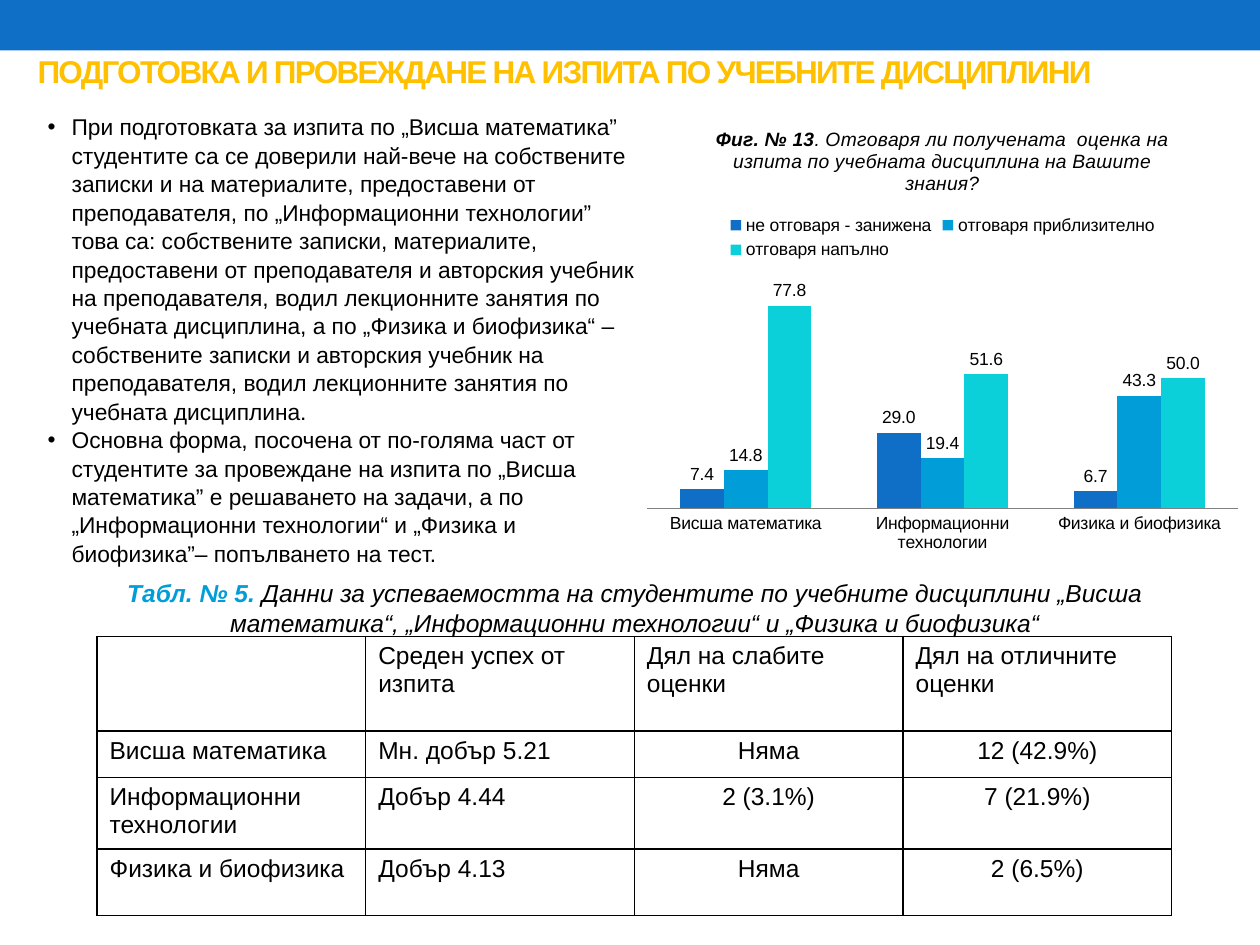
from lxml import etree
from pptx import Presentation
from pptx.chart.data import CategoryChartData
from pptx.dml.color import RGBColor
from pptx.enum.chart import XL_CHART_TYPE, XL_LABEL_POSITION, XL_LEGEND_POSITION, XL_TICK_MARK
from pptx.enum.shapes import MSO_SHAPE
from pptx.enum.text import MSO_ANCHOR, PP_ALIGN
from pptx.oxml import parse_xml
from pptx.oxml.ns import nsdecls, qn
from pptx.util import Inches, Pt


def color(value):
    return RGBColor.from_string(value)


def add_run(paragraph, text, size, hue="000000", bold=False, italic=False):
    run = paragraph.add_run()
    run.text = text
    run.font.name = "Arial"
    run.font.size = Pt(size)
    run.font.bold = bold
    run.font.italic = italic
    run.font.color.rgb = color(hue)
    return run


prs = Presentation()
prs.slide_width, prs.slide_height = Inches(10), Inches(7.5)
slide = prs.slides.add_slide(prs.slide_layouts[6])
shapes = slide.shapes

band = shapes.add_shape(MSO_SHAPE.RECTANGLE, 0, 0, Inches(10), Inches(0.4))
band.shadow.inherit = False
band.fill.solid()
band.fill.fore_color.rgb = color("0F6FC6")
band.line.fill.background()

heading = shapes.add_textbox(Inches(0.2), Inches(0.21), Inches(9.61), Inches(0.71)).text_frame
heading.word_wrap = True
heading.vertical_anchor = MSO_ANCHOR.MIDDLE
heading_run = add_run(heading.paragraphs[0], "ПОДГОТОВКА И ПРОВЕЖДАНЕ НА ИЗПИТА ПО УЧЕБНИТЕ ДИСЦИПЛИНИ",
                      18, "FFC000", bold=True)
heading_run.font._element.set("spc", "-100")

# Findings
findings = [
    "При подготовката за изпита по „Висша математика” студентите са се доверили най-вече на "
    "собствените записки и на материалите, предоставени от преподавателя, по „Информационни "
    "технологии” това са: собствените записки, материалите, предоставени от преподавателя и "
    "авторския учебник на преподавателя, водил лекционните занятия по учебната дисциплина, а по "
    "„Физика и биофизика“ – собствените записки и авторския учебник на преподавателя, водил "
    "лекционните занятия по учебната дисциплина.",
    "Основна форма, посочена от по-голяма част от студентите за провеждане на изпита по „Висша "
    "математика” е решаването на задачи, а по „Информационни технологии“ и „Физика и биофизика”– "
    "попълването на тест.",
]
body = shapes.add_textbox(Inches(0.28), Inches(0.84), Inches(4.88), Inches(3.62)).text_frame
body.word_wrap = True
for i, finding in enumerate(findings):
    paragraph = body.add_paragraph() if i else body.paragraphs[0]
    properties = paragraph._p.get_or_add_pPr()
    properties.set("marL", str(Inches(0.19)))
    properties.set("indent", str(-Inches(0.19)))
    etree.SubElement(properties, qn("a:buFont")).set("typeface", "Arial")
    etree.SubElement(properties, qn("a:buChar")).set("char", "•")
    paragraph.line_spacing = 1.04
    add_run(paragraph, finding, 13)

# Results table
rows = [
    ["", "Среден успех от изпита", "Дял на слабите оценки", "Дял на отличните оценки"],
    ["Висша математика", "Мн. добър 5.21", "Няма", "12 (42.9%)"],
    ["Информационни технологии", "Добър 4.44", "2 (3.1%)", "7 (21.9%)"],
    ["Физика и биофизика", "Добър 4.13", "Няма", "2 (6.5%)"],
]
row_heights = [0.75, 0.37, 0.54, 0.53]
results = shapes.add_table(4, 4, Inches(0.77), Inches(5.05), Inches(8.53), Inches(sum(row_heights))).table
results.first_row = results.horz_banding = False
for column in results.columns:
    column.width = Inches(8.53 / 4)
for r, (texts, height) in enumerate(zip(rows, row_heights)):
    results.rows[r].height = Inches(height)
    for c, text in enumerate(texts):
        cell = results.cell(r, c)
        paragraph = cell.text_frame.paragraphs[0]
        if text:
            add_run(paragraph, text, 14)
        if r and c > 1:
            paragraph.alignment = PP_ALIGN.CENTER
        for side in ("lnL", "lnR", "lnT", "lnB"):
            cell._tc.get_or_add_tcPr().append(parse_xml(
                f'<a:{side} {nsdecls("a")} w="12700"><a:solidFill><a:srgbClr val="000000"/>'
                f'</a:solidFill></a:{side}>'))
        cell.fill.background()

caption = shapes.add_textbox(Inches(0.59), Inches(4.54), Inches(8.9), Inches(0.57)).text_frame
caption.word_wrap = True
caption.paragraphs[0].alignment = PP_ALIGN.CENTER
add_run(caption.paragraphs[0], "Табл. № 5. ", 14, "009DD9", bold=True, italic=True)
add_run(caption.paragraphs[0], "Данни за успеваемостта на студентите по учебните дисциплини „Висша "
        "математика“, „Информационни технологии“ и „Физика и биофизика“", 14, italic=True)

# Grade opinion chart
opinions = {
    "не отговаря - занижена": ("0F6FC6", (7.4, 29, 6.7)),
    "отговаря приблизително": ("009DD9", (14.8, 19.4, 43.3)),
    "отговаря напълно": ("0BD0D9", (77.8, 51.6, 50)),
}
data = CategoryChartData(number_format="0.0")
data.categories = ["Висша математика", "Информационни технологии", "Физика и биофизика"]
for name, (_, values) in opinions.items():
    data.add_series(name, values)
chart = shapes.add_chart(XL_CHART_TYPE.COLUMN_CLUSTERED, Inches(5.04), Inches(0.84),
                         Inches(4.88), Inches(3.62), data).chart
chart.font.name = "Arial"
chart.font.size = Pt(10)
chart.font.color.rgb = color("000000")

chart.has_title = True
chart_title = chart.chart_title.text_frame.paragraphs[0]
add_run(chart_title, "Фиг. № 13", 11, bold=True, italic=True)
add_run(chart_title, ". Отговаря ли получената  оценка на изпита по учебната дисциплина "
        "на Вашите знания?", 11, italic=True)

chart.has_legend = True
chart.legend.position = XL_LEGEND_POSITION.TOP
chart.legend.include_in_layout = False

chart.category_axis.major_tick_mark = XL_TICK_MARK.NONE
chart.category_axis.format.line.color.rgb = color("808080")
chart.value_axis.visible = False
chart.value_axis.has_major_gridlines = False
chart.value_axis.minimum_scale = 0

plot = chart.plots[0]
plot.vary_by_categories = False
plot.gap_width = 150
plot.overlap = 0
for series, (hue, _) in zip(plot.series, opinions.values()):
    series.format.fill.solid()
    series.format.fill.fore_color.rgb = color(hue)
    labels = series.data_labels
    labels.show_value = True
    labels.number_format = "0.0"
    labels.number_format_is_linked = False
    labels.position = XL_LABEL_POSITION.OUTSIDE_END

prs.save("out.pptx")
